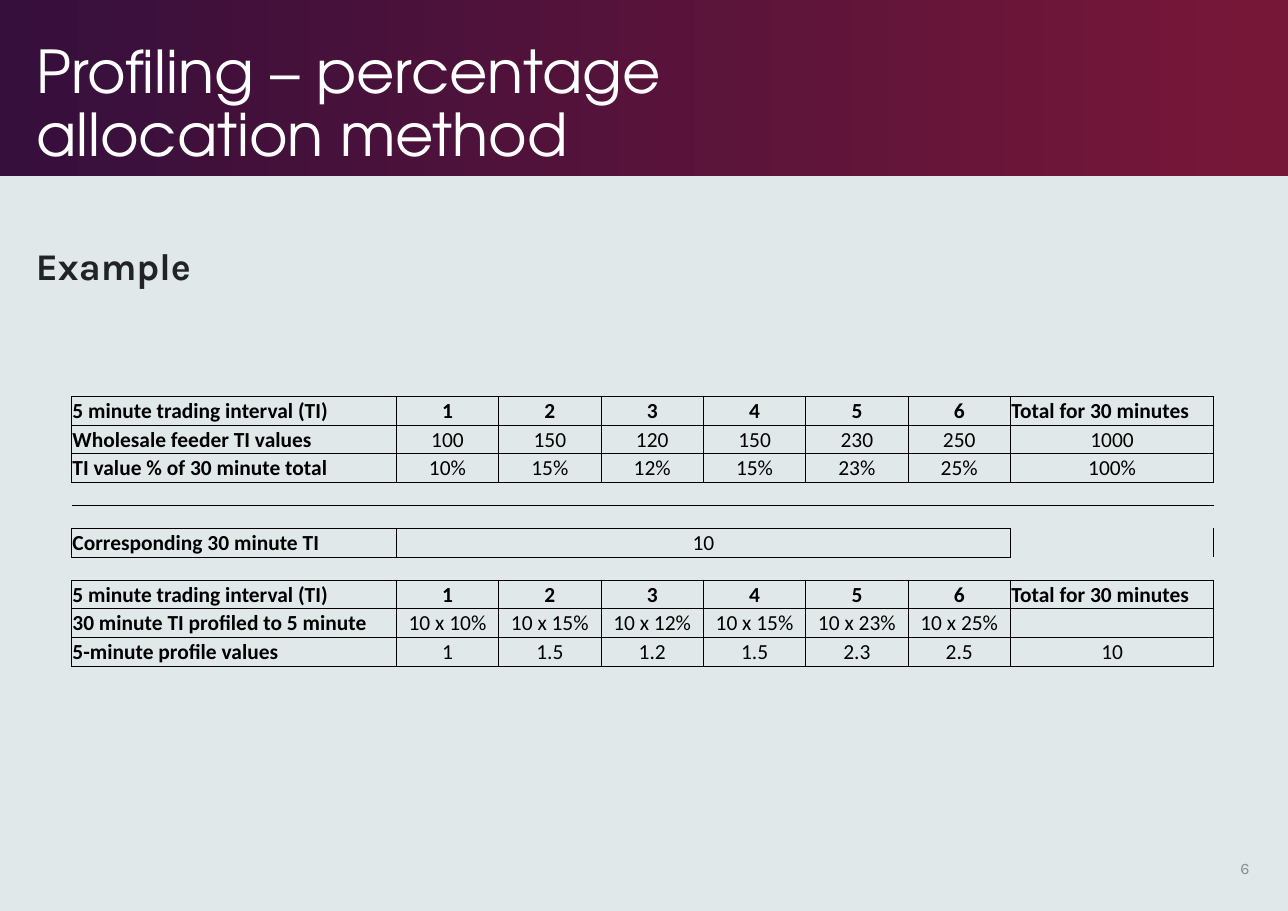
import lxml.etree
import pptx
import pptx.dml.color
import pptx.enum.shapes
import pptx.enum.text
import pptx.oxml.ns
import pptx.util

Cm = pptx.util.Cm
Pt = pptx.util.Pt
qn = pptx.oxml.ns.qn
ALIGN = pptx.enum.text.PP_ALIGN
ANCHOR = pptx.enum.text.MSO_ANCHOR

HUES = {
    "page": "E0E8EA",
    "plum": "360F3C",
    "wine": "771738",
    "white": "FFFFFF",
    "ink": "222324",
    "gray": "8D8D8E",
    "black": "000000",
}
PLAIN = "{2D5ABB26-0587-4C30-8999-92F81FD0307C}"  # table style without grid
SIDES = {"L": (0, -1), "R": (0, 1), "T": (-1, 0), "B": (1, 0)}

HEAD = ["5 minute trading interval (TI)", *"123456", "Total for 30 minutes"]
ROWS = [
    HEAD,
    ["Wholesale feeder TI values", "100", "150", "120", "150", "230", "250", "1000"],
    ["TI value % of 30 minute total", "10%", "15%", "12%", "15%", "23%", "25%", "100%"],
    [],
    [],
    ["Corresponding 30 minute TI", "10", "", "", "", "", ""],
    [],
    HEAD,
    ["30 minute TI profiled to 5 minute", "10 x 10%", "10 x 15%", "10 x 12%",
     "10 x 15%", "10 x 23%", "10 x 25%", ""],
    ["5-minute profile values", "1", "1.5", "1.2", "1.5", "2.3", "2.5", "10"],
]
MERGED = 5
WIDTHS = [7.49] + [2.36] * 6 + [4.69]


def tint(name):
    return pptx.dml.color.RGBColor.from_string(HUES[name])


def write(frame, text, size, font, hue, bold=False, align=ALIGN.LEFT, space=None):
    para = frame.paragraphs[0]
    para.alignment = align
    para.line_spacing = space
    run = para.add_run()
    run.text = text
    run.font.size = Pt(size)
    run.font.name = font
    run.font.bold = bold
    run.font.color.rgb = tint(hue)


def rule(cell, side):
    """Draw a thin black border on one side of a cell."""
    line = lxml.etree.SubElement(cell._tc.get_or_add_tcPr(), qn("a:ln" + side), w=str(Pt(0.5)))
    fill = lxml.etree.SubElement(line, qn("a:solidFill"))
    lxml.etree.SubElement(fill, qn("a:srgbClr"), val=HUES["black"])


class Deck:
    """Holds the fonts and the current slide."""

    title_font = "TeX Gyre Adventor"
    body_font = "Karla"
    grid_font = "Calibri"

    def __init__(self, width, height):
        self.file = pptx.Presentation()
        self.file.slide_width = Cm(width)
        self.file.slide_height = Cm(height)
        self.slide = self.file.slides.add_slide(self.file.slide_layouts[5])
        fill = self.slide.background.fill
        fill.solid()
        fill.fore_color.rgb = tint("page")

    def band(self, width, height):
        """Add the gradient strip behind the title."""
        shape = self.slide.shapes.add_shape(
            pptx.enum.shapes.MSO_SHAPE.RECTANGLE, 0, 0, Cm(width), Cm(height))
        shape.shadow.inherit = False
        shape.line.fill.background()
        shape.fill.gradient()
        shape.fill.gradient_angle = 0
        for stop, hue, place in zip(shape.fill.gradient_stops, ("plum", "wine"), (0, 0.99)):
            stop.color.rgb = tint(hue)
            stop.position = place
        self.slide.shapes._spTree.insert(2, shape._element)

    def title(self, text, left, top, width, height):
        shape = self.slide.shapes.title
        shape.left, shape.top = Cm(left), Cm(top)
        shape.width, shape.height = Cm(width), Cm(height)
        frame = shape.text_frame
        frame.word_wrap = True
        frame.auto_size = pptx.enum.text.MSO_AUTO_SIZE.NONE
        frame.vertical_anchor = ANCHOR.BOTTOM
        write(frame, text, 38.6, self.title_font, "white", space=0.9)

    def label(self, text, left, top, width, height, anchor=ANCHOR.TOP, **style):
        shape = self.slide.shapes.add_textbox(Cm(left), Cm(top), Cm(width), Cm(height))
        shape.text_frame.word_wrap = True
        shape.text_frame.vertical_anchor = anchor
        write(shape.text_frame, text, font=self.body_font, **style)

    def table(self, rows, widths, left, top):
        highs = [0.53 if not row else 0.66 for row in rows]
        frame = self.slide.shapes.add_table(
            len(rows), len(widths), Cm(left), Cm(top), Cm(sum(widths)), Cm(sum(highs)))
        grid = frame.table
        grid.first_row = grid.horz_banding = False
        grid._tbl.tblPr.find(qn("a:tableStyleId")).text = PLAIN
        for col, width in zip(grid.columns, widths):
            col.width = Cm(width)
        boxed = {(r, c) for r, row in enumerate(rows) for c in range(len(row))}
        for r, row in enumerate(rows):
            grid.rows[r].height = Cm(highs[r])
            for c in range(len(widths)):
                cell = grid.cell(r, c)
                for side, (down, across) in SIDES.items():
                    if boxed & {(r, c), (r + down, c + across)}:
                        rule(cell, side)
                self.cell(cell, row[c] if c < len(row) else "", c == 0, row is HEAD)
        grid.cell(MERGED, 1).merge(grid.cell(MERGED, 6))

    def cell(self, cell, text, first, head):
        cell.fill.background()
        cell.margin_left = cell.margin_right = cell.margin_top = Cm(0.02)
        cell.margin_bottom = 0
        cell.vertical_anchor = ANCHOR.MIDDLE
        if text:
            left = first or text == HEAD[-1]
            write(cell.text_frame, text, 14, self.grid_font, "black", bold=first or head,
                  align=ALIGN.LEFT if left else ALIGN.CENTER)
        else:
            para = cell.text_frame.paragraphs[0]
            lxml.etree.SubElement(para._p, qn("a:endParaRPr"), sz="800")


def main():
    deck = Deck(29.7, 21)
    deck.band(29.7, 4.06)
    deck.title("Profiling – percentage allocation method", 0.58, 0.41, 21.92, 3.63)
    deck.label("Example", 0.58, 5.59, 28.5, 13.34, size=24.6, hue="ink", bold=True, space=0.9)
    deck.label("6", 27.66, 19.46, 1.4, 1.12, anchor=ANCHOR.MIDDLE,
               size=10.5, hue="gray", align=ALIGN.RIGHT)
    deck.table(ROWS, WIDTHS, 1.65, 9.14)
    deck.file.save("out.pptx")


if __name__ == "__main__":
    main()
